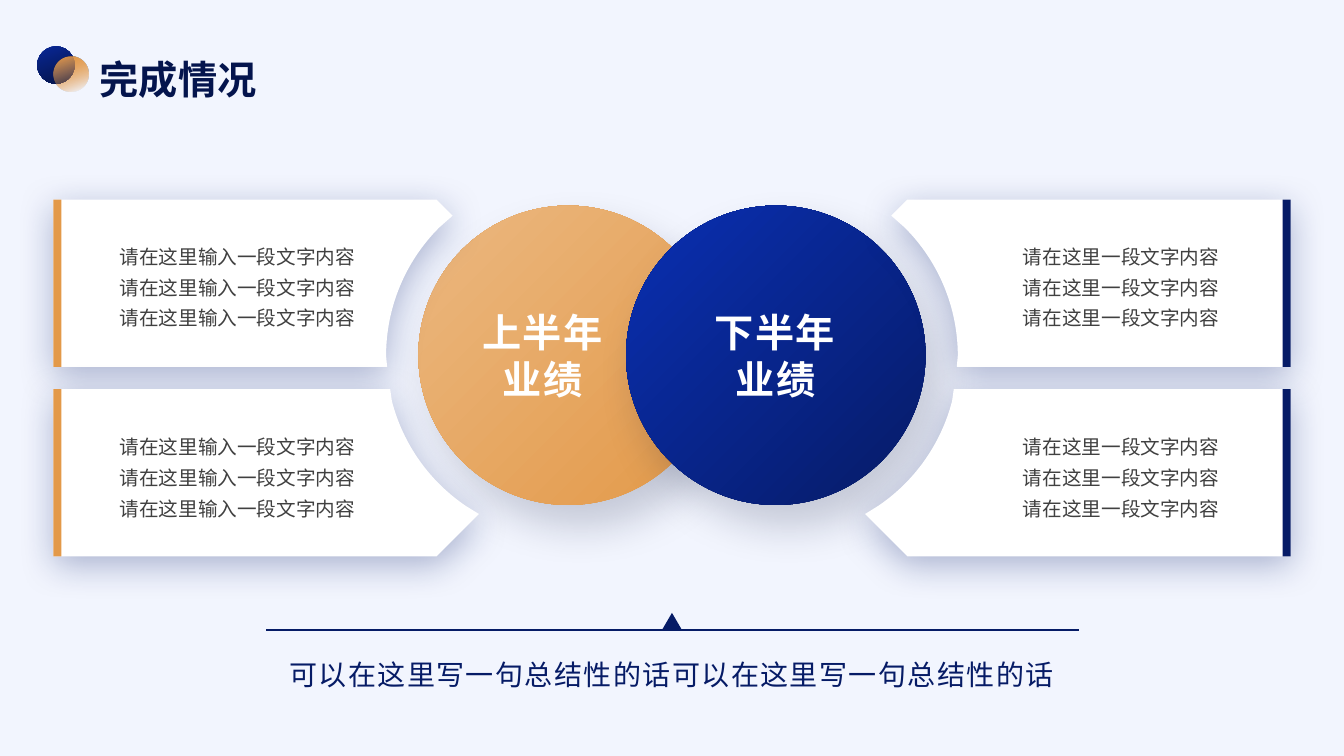
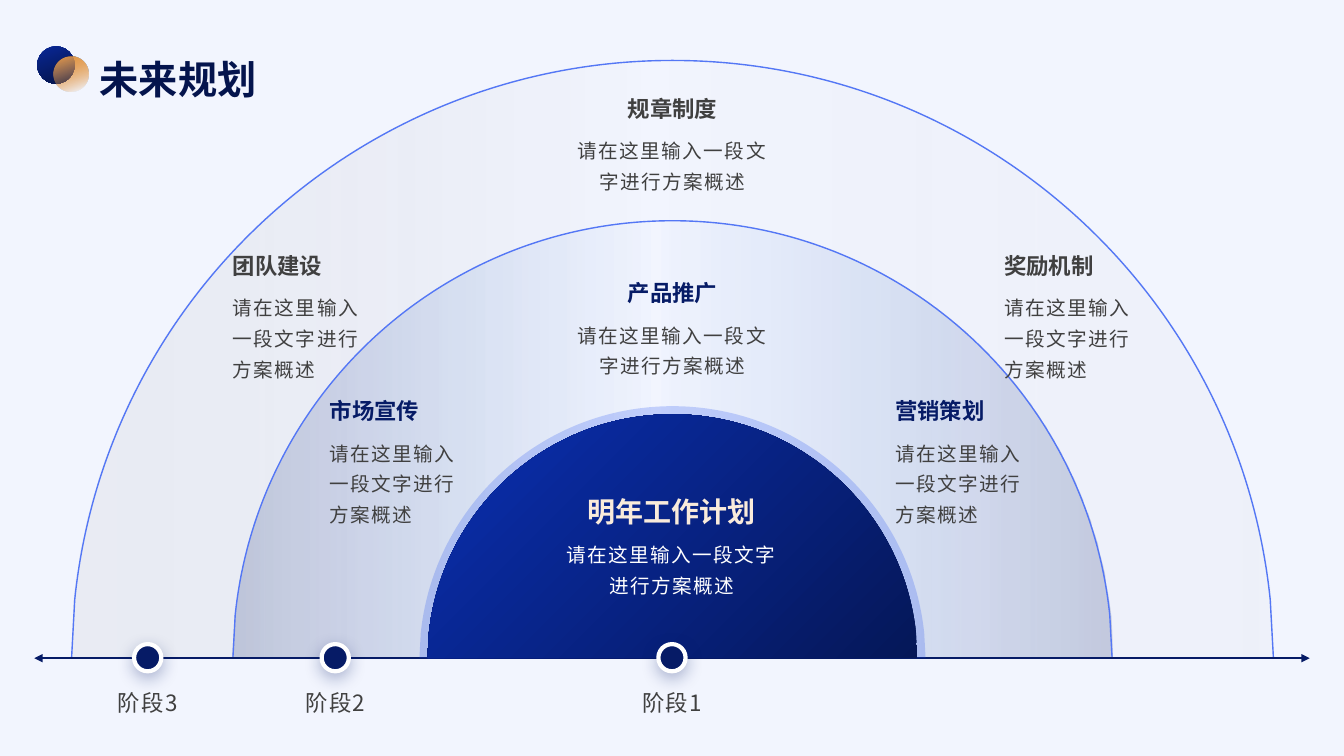
from math import cos, radians, sin, tan

from lxml.etree import SubElement
from pptx import Presentation
from pptx.enum.shapes import MSO_CONNECTOR as CONN, MSO_SHAPE as SHAPE
from pptx.enum.text import PP_ALIGN as ALIGN
from pptx.dml.color import RGBColor
from pptx.oxml.ns import qn
from pptx.oxml.xmlchemy import OxmlElement
from pptx.util import Inches, Pt

W, H = 13.33, 7.5
MID = 6.67
FONT = "Noto Sans CJK SC"
NAVY, ORANGE, GREY, WHITE, EDGE = "061B66", "E39949", "404040", "FFFFFF", "5477F5"
LOGO_BLUE = ([(4, "092794"), (100, "041346")], 70)
LOGO_ORANGE = ([(4, ORANGE), (95, ORANGE, 0)], 70)
TITLE_INK = ([(4, "04144D"), (99, "030D33")], 70)
CREAM_INK = ([(0, "F9EBDB"), (100, "EEC292")], 90)
ORANGE_DISC = ([(0, "EBB880"), (100, ORANGE)], None)
BLUE_DISC = ([(0, "0A2FB2"), (100, NAVY)], None)
CORE = ([(0, "0A2FB2"), (100, "051758")], None)
OUTER_BAND = ([(0, "BDBDBD", 16), (48, "808080", 0), (100, "BDBDBD", 6)], 0)
INNER_BAND = ([(0, NAVY, 18), (48, "0162EC", 0), (100, NAVY, 18)], 0)
DISC_SHADOW = ("030D33", 19, 30, 18, 60)
CARD_SHADOW = (NAVY, 30, 26, 6, 90)
DOT_SHADOW = (NAVY, 30, 12, 4, 90)
AXIS_Y = 6.53
SUMMARY = "请在这里输入一段文字进行方案概述"


def rgb(color):
    """Turn a hex string into a colour."""
    return RGBColor.from_string(color)


def add_color(parent, color, alpha=100):
    """Add a colour with its opacity in percent to an XML element."""
    clr = SubElement(parent, qn("a:srgbClr"), val=color)
    if alpha < 100:
        SubElement(clr, qn("a:alpha"), val=str(alpha * 1000))


def gradient(stops, angle):
    """Build a linear gradient, or a radial one from the top left without an angle."""
    grad = OxmlElement("a:gradFill")
    stop_list = SubElement(grad, qn("a:gsLst"))
    for pos, *color in stops:
        add_color(SubElement(stop_list, qn("a:gs"), pos=str(pos * 1000)), *color)
    if angle is None:
        radial = SubElement(grad, qn("a:path"), path="circle")
        SubElement(radial, qn("a:fillToRect"), r="100000", b="100000")
    else:
        SubElement(grad, qn("a:lin"), ang=str(angle * 60000), scaled="0")
    return grad


def paint(fill, props, color, alpha=100):
    """Fill with a hex colour or with a (stops, angle) gradient."""
    fill.solid()
    solid = props.find(qn("a:solidFill"))
    if isinstance(color, str):
        for child in list(solid):
            solid.remove(child)
        add_color(solid, color, alpha)
    else:
        props.replace(solid, gradient(*color))


def style(sp, fill, alpha=100, line=None, width=1, shadow=None):
    """Set the fill, outline and shadow of a shape."""
    props = sp._element.spPr
    paint(sp.fill, props, fill, alpha)
    if line:
        sp.line.color.rgb = rgb(line)
        sp.line.width = Pt(width)
    else:
        sp.line.fill.background()
    sp.shadow.inherit = False
    if shadow:
        color, opacity, blur, dist, angle = shadow
        outer = SubElement(props.find(qn("a:effectLst")), qn("a:outerShdw"),
                           blurRad=str(Pt(blur)), dist=str(Pt(dist)),
                           dir=str(angle * 60000), algn="ctr", rotWithShape="0")
        add_color(outer, color, opacity)


def shape(s, kind, x, y, w, h, fill, **fmt):
    """Add a preset shape."""
    style(s.shapes.add_shape(kind, Inches(x), Inches(y), Inches(w), Inches(h)), fill, **fmt)


def arc(cx, cy, radius, a1, a2):
    """Return the start of an arc and its Bezier curve, angles clockwise from the right."""
    a1, a2 = radians(a1), radians(a2)
    k = 4 / 3 * tan((a2 - a1) / 4)

    def place(a, pull):
        """Find a point on the circle, pulled along its tangent."""
        return cx + radius * (cos(a) - pull * sin(a)), cy + radius * (sin(a) + pull * cos(a))

    return [place(a1, 0), (place(a1, k), place(a2, -k), place(a2, 0))]


def outline(s, segments, fill, mirrored=False, **fmt):
    """Add a closed freeform from points and Bezier curves of three points each."""
    points, curves = [], []
    for segment in segments:
        if len(segment) == 3:
            curves.append(len(points))
            points.extend(segment)
        else:
            points.append(segment)
    start, *rest = [(Inches(W - x if mirrored else x), Inches(y)) for x, y in points]
    builder = s.shapes.build_freeform(*start)
    builder.add_line_segments(rest, close=True)
    sp = builder.convert_to_shape()
    steps = list(next(sp._element.iter(qn("a:moveTo"))).getparent())
    for i in curves:
        curve = OxmlElement("a:cubicBezTo")
        steps[i].addprevious(curve)
        for step in steps[i:i + 3]:
            curve.append(step[0])
            step.getparent().remove(step)
    style(sp, fill, **fmt)


def line(s, x1, x2, y, width, arrows=False):
    """Add a horizontal line, with arrowheads at both ends on request."""
    cn = s.shapes.add_connector(CONN.STRAIGHT, Inches(x1), Inches(y), Inches(x2), Inches(y))
    cn.line.color.rgb = rgb(NAVY)
    cn.line.width = Pt(width)
    if arrows:
        for end in ("a:headEnd", "a:tailEnd"):
            SubElement(cn.line._get_or_add_ln(), qn(end), type="triangle")
    SubElement(cn._element.spPr, qn("a:effectLst"))


def text(s, content, x, y, w, h, size=14, color=GREY, bold=False, font=FONT,
         align=ALIGN.CENTER, leading=None, spacing=0):
    """Add a text box with one paragraph for each line of the content."""
    tf = s.shapes.add_textbox(Inches(x), Inches(y), Inches(w), Inches(h)).text_frame
    tf.word_wrap = True
    tf.margin_left = tf.margin_right = tf.margin_top = tf.margin_bottom = 0
    for i, words in enumerate(content.split("\n")):
        p = tf.add_paragraph() if i else tf.paragraphs[0]
        p.alignment = align
        if leading:
            p.line_spacing = leading
        r = p.add_run()
        r.text = words
        r.font.name, r.font.size, r.font.bold = font, Pt(size), bold
        props = r._r.get_or_add_rPr()
        paint(r.font.fill, props, color)
        SubElement(props, qn("a:ea"), typeface=FONT)
        if spacing:
            props.set("spc", str(spacing * 100))


def new_slide(prs, title):
    """Add a slide with the tinted backdrop, the two-disc mark and the title."""
    s = prs.slides.add_slide(prs.slide_layouts[6])
    shape(s, SHAPE.RECTANGLE, 0, 0, W, H, "B3C3FB", alpha=16)
    for _ in range(2):
        shape(s, SHAPE.OVAL, 0.37, 0.46, 0.37, 0.37, LOGO_BLUE)
        shape(s, SHAPE.OVAL, 0.53, 0.56, 0.35, 0.35, LOGO_ORANGE)
    text(s, title, 0.99, 0.55, 5.14, 0.41, size=28, color=TITLE_INK, bold=True, align=ALIGN.LEFT)
    return s


def cards(s, mirrored, accent, words, x, w):
    """Add the two cards of one side with their accent bars and texts."""
    left, corner, height, bar = 0.53, 4.33, 1.66, 0.08
    upper, lower = 1.98, 3.86
    upper_end, lower_end = upper + height, lower + height
    ring = (5.63, 3.53, 1.8)
    shapes = (
        (upper, 2.36, [(left, upper), (corner, upper), (4.49, 2.14), *arc(*ring, 225, 180),
                       (3.84, upper_end), (left, upper_end)]),
        (lower, 4.25, [(left, lower), (3.87, lower), *arc(*ring, 165.5, 124),
                       (4.75, 5.1), (corner, lower_end), (left, lower_end)]),
    )
    for top, text_top, segments in shapes:
        if mirrored:
            segments = segments
        outline(s, segments, WHITE, mirrored=mirrored, shadow=CARD_SHADOW)
        shape(s, SHAPE.RECTANGLE, W - left - bar if mirrored else left, top, bar, height, accent)
        text(s, "\n".join([words] * 3), x, text_top, w, 0.9, leading=1.3)


def dome(s, radius, top, fill, **fmt):
    """Add a round arch that stands on the time axis."""
    circle = (MID, top + radius, radius)
    dip = 5.9
    left, left_curve = arc(*circle, 180 + dip, 270)
    right_curve = arc(*circle, 270, 360 - dip)[1]
    outline(s, [(MID - radius, AXIS_Y), left, left_curve, right_curve, (MID + radius, AXIS_Y)],
            fill, **fmt)


def topic(s, heading, x, y, color, centered=False):
    """Add a heading with its summary below."""
    align = ALIGN.CENTER if centered else ALIGN.LEFT
    w, h = (1.9, 0.59) if centered else (1.28, 0.9)
    head_w = 1.12
    text(s, heading, x + (w - head_w) / 2 if centered else x, y, head_w, 0.27,
         size=16, color=color, bold=True, align=align)
    text(s, SUMMARY, x, y + 0.37, w, h, font="Arial", align=align, leading=1.3, spacing=1)


def results(prs):
    """Build the slide on the results of both half-years."""
    s = new_slide(prs, "完成情况")
    for x, fill in ((4.15, ORANGE_DISC), (6.21, BLUE_DISC)):
        shape(s, SHAPE.OVAL, x, 2.04, 2.97, 2.97, fill, shadow=DISC_SHADOW)
    for x, words in ((7.05, "下半年业绩"), (4.74, "上半年\n业绩")):
        text(s, words, x, 3.06, 1.28, 0.94, size=28, color=WHITE, bold=True, spacing=1)
    cards(s, True, NAVY, "请在这里一段文字内容", 9.91, 2.42)
    cards(s, False, ORANGE, "请在这里输入一段文字内容", 1.1, 2.51)
    line(s, 2.64, 10.7, 6.25, 1.25)
    shape(s, SHAPE.ISOSCELES_TRIANGLE, 6.56, 6.08, 0.21, 0.18, NAVY)
    text(s, "可以在这里写一句总结性的话" * 2, 2.61, 6.42, 8.1, 0.41,
         size=20, color=NAVY, leading=1.3, spacing=1)


def plan(prs):
    """Build the slide on the plan in stages."""
    s = new_slide(prs, "未来规划")
    dome(s, 5.96, 0.6, OUTER_BAND, line=EDGE)
    dome(s, 4.36, 2.19, INNER_BAND, line=EDGE)
    line(s, 0.34, 12.99, AXIS_Y, 1.5, arrows=True)
    dome(s, 2.51, 4.03, "1B4AF2", alpha=22)
    dome(s, 2.43, 4.11, CORE)
    text(s, "明年工作计划", 5.71, 4.91, 1.9, 0.34, size=20, color=CREAM_INK, bold=True)
    text(s, SUMMARY, 5.58, 5.32, 2.17, 0.59, color=WHITE, leading=1.3, spacing=1)
    for stage, x in enumerate((MID, 3.33, 1.47), 1):
        shape(s, SHAPE.OVAL, x - 0.14, AXIS_Y - 0.14, 0.27, 0.27, NAVY,
              line=WHITE, width=3, shadow=DOT_SHADOW)
        text(s, f"阶段{stage}", x - 0.35, 6.76, 0.69, 0.33, size=16, leading=1.3, spacing=1)
    for heading, x, y, color in (("市场宣传", 3.27, 3.94, NAVY), ("营销策划", 8.88, 3.94, NAVY),
                                 ("团队建设", 2.31, 2.5, GREY), ("奖励机制", 9.96, 2.5, GREY)):
        topic(s, heading, x, y, color)
    topic(s, "规章制度", 5.72, 0.94, GREY, centered=True)
    topic(s, "产品推广", 5.72, 2.77, NAVY, centered=True)


def main():
    """Build and save the presentation."""
    prs = Presentation()
    prs.slide_width, prs.slide_height = Inches(W), Inches(H)
    results(prs)
    plan(prs)
    prs.save("out.pptx")


if __name__ == "__main__":
    main()
